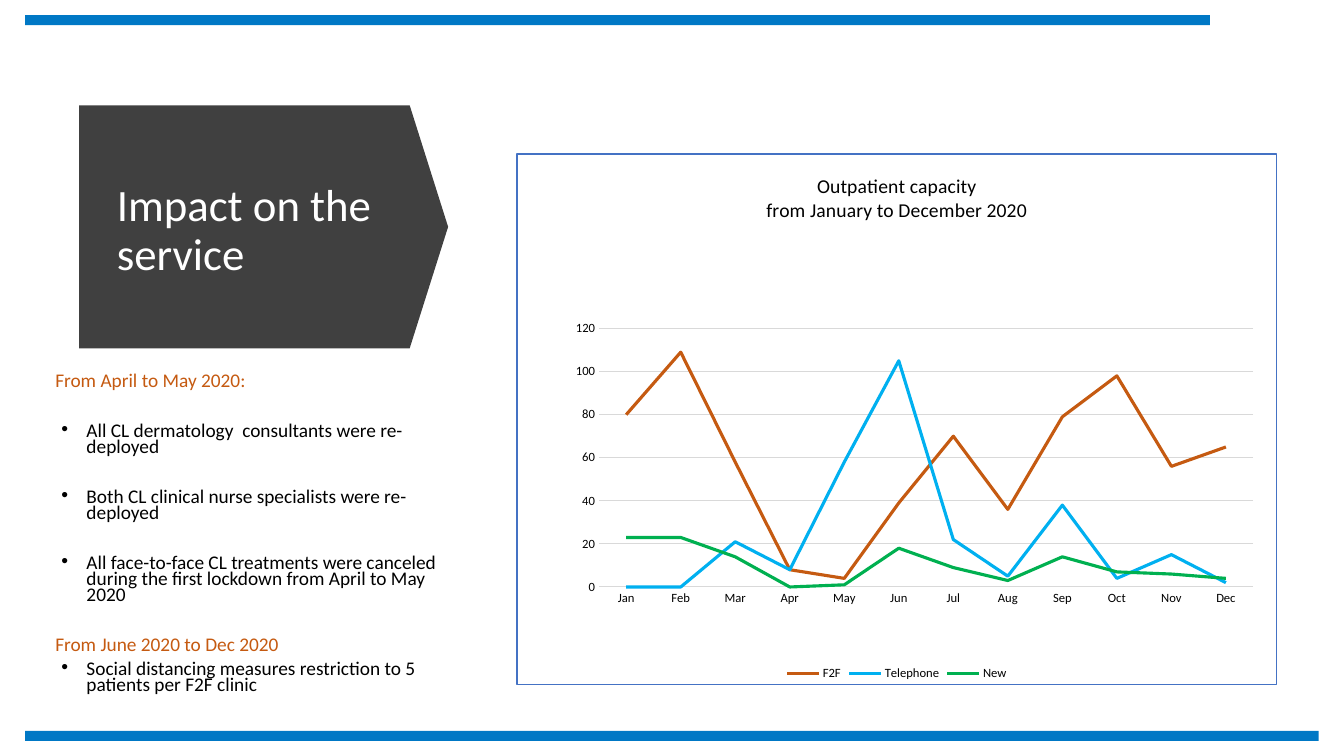
import pptx
import pptx.chart.data
import pptx.dml.color
import pptx.enum.chart
import pptx.enum.shapes
import pptx.enum.text
import pptx.oxml
import pptx.oxml.ns
import pptx.util
from pptx.util import Inches

RGBColor = pptx.dml.color.RGBColor
BAR_BLUE = RGBColor(0x00, 0x78, 0xC5)
ARROW_GREY = RGBColor(0x40, 0x40, 0x40)
WHITE = RGBColor(0xFF, 0xFF, 0xFF)
BLACK = RGBColor(0x00, 0x00, 0x00)
ORANGE = RGBColor(0xC5, 0x5A, 0x11)
SKY = RGBColor(0x00, 0xB0, 0xF0)
GREEN = RGBColor(0x00, 0xB0, 0x50)
GRID_GREY = RGBColor(0xD9, 0xD9, 0xD9)
FONT = "Calibri"
BLANK_LAYOUT = 6
SECTION_GAP = 17.8

# Text, is it a bullet, space before in points
IMPACT_LINES = [
    ("From April to May 2020:", False, 0),
    ("All CL dermatology  consultants were re-deployed", True, SECTION_GAP),
    ("Both CL clinical nurse specialists were re-deployed", True, SECTION_GAP),
    ("All face-to-face CL treatments were canceled during the first lockdown "
     "from April to May 2020", True, SECTION_GAP),
    ("From June 2020 to Dec 2020", False, SECTION_GAP),
    ("Social distancing measures restriction to 5 patients per F2F clinic", True, 0),
]

MONTHS = ["Jan", "Feb", "Mar", "Apr", "May", "Jun",
          "Jul", "Aug", "Sep", "Oct", "Nov", "Dec"]
APPOINTMENTS = [
    ("F2F", ORANGE, (80, 109, 58, 8, 4, 39, 70, 36, 79, 98, 56, 65)),
    ("Telephone", SKY, (0, 0, 21, 8, 58, 105, 22, 5, 38, 4, 15, 2)),
    ("New", GREEN, (23, 23, 14, 0, 1, 18, 9, 3, 14, 7, 6, 4)),
]
CHART_TITLE = ["Outpatient capacity", "from January to December 2020"]

CHART_FRAME = """<c:spPr {ns}><a:solidFill><a:srgbClr val="FFFFFF"/></a:solidFill>
<a:ln w="12700"><a:solidFill><a:srgbClr val="4472C4"/></a:solidFill></a:ln></c:spPr>"""
PLOT_LAYOUT = """<c:layout {ns}><c:manualLayout><c:layoutTarget val="inner"/>
<c:xMode val="edge"/><c:yMode val="edge"/><c:x val="0.108"/><c:y val="0.329"/>
<c:w val="0.861"/><c:h val="0.487"/></c:manualLayout></c:layout>"""


def chart_xml(template):
    return pptx.oxml.parse_xml(template.format(ns=pptx.oxml.ns.nsdecls("c", "a")))


def style_font(font, size, color):
    font.name = FONT
    font.size = pptx.util.Pt(size)
    font.bold = False
    font.color.rgb = color


def add_filled_shape(slide, kind, left, top, width, height, color):
    shape = slide.shapes.add_shape(
        kind, Inches(left), Inches(top), Inches(width), Inches(height))
    shape.shadow.inherit = False
    shape.fill.solid()
    shape.fill.fore_color.rgb = color
    shape.line.fill.background()
    return shape


def add_text_frame(slide, left, top, width, height):
    box = slide.shapes.add_textbox(
        Inches(left), Inches(top), Inches(width), Inches(height))
    box.text_frame.word_wrap = True
    return box.text_frame


def add_run(paragraph, text, size, color):
    run = paragraph.add_run()
    run.text = text
    style_font(run.font, size, color)


def make_bullet(paragraph):
    properties = paragraph._p.get_or_add_pPr()
    properties.set("marL", str(Inches(0.31)))
    properties.set("indent", str(Inches(-0.25)))
    namespace = pptx.oxml.ns.nsdecls("a")
    properties.append(pptx.oxml.parse_xml(f'<a:buFont {namespace} typeface="Arial"/>'))
    properties.append(pptx.oxml.parse_xml(f'<a:buChar {namespace} char="•"/>'))


def add_heading(slide):
    arrow = add_filled_shape(slide, pptx.enum.shapes.MSO_SHAPE.DOWN_ARROW,
                             1.41, 0.42, 2.41, 3.66, ARROW_GREY)
    arrow.rotation = 270
    arrow.adjustments[0] = 1
    arrow.adjustments[1] = 0.158
    heading = add_text_frame(slide, 1.06, 1.32, 2.92, 1.95)
    heading.vertical_anchor = pptx.enum.text.MSO_ANCHOR.MIDDLE
    heading.paragraphs[0].line_spacing = 0.9
    add_run(heading.paragraphs[0], "Impact on the service", 32, WHITE)


def add_impact_list(slide):
    impact = add_text_frame(slide, 0.45, 3.67, 4.27, 3.56)
    for index, (text, is_bullet, gap) in enumerate(IMPACT_LINES):
        paragraph = impact.add_paragraph() if index else impact.paragraphs[0]
        if is_bullet:
            make_bullet(paragraph)
        paragraph.line_spacing = 0.7
        paragraph.space_after = pptx.util.Pt(6)
        if gap:
            paragraph.space_before = pptx.util.Pt(gap)
        add_run(paragraph, text, 13.8, BLACK if is_bullet else ORANGE)


def style_line(line, color, width):
    line.color.rgb = color
    line.width = pptx.util.Pt(width)


def style_axes(chart):
    for axis in (chart.category_axis, chart.value_axis):
        axis.major_tick_mark = pptx.enum.chart.XL_TICK_MARK.NONE
        axis.minor_tick_mark = pptx.enum.chart.XL_TICK_MARK.NONE
        style_font(axis.tick_labels.font, 9, BLACK)
    style_line(chart.category_axis.format.line, GRID_GREY, 0.75)
    values = chart.value_axis
    values.minimum_scale, values.maximum_scale, values.major_unit = 0, 120, 20
    values.format.line.fill.background()
    style_line(values.major_gridlines.format.line, GRID_GREY, 0.75)


def add_capacity_chart(slide):
    capacity = pptx.chart.data.CategoryChartData()
    capacity.categories = MONTHS
    for name, _, counts in APPOINTMENTS:
        capacity.add_series(name, counts)
    chart = slide.shapes.add_chart(
        pptx.enum.chart.XL_CHART_TYPE.LINE, Inches(5.12), Inches(1.52),
        Inches(7.55), Inches(5.28), capacity).chart
    style_font(chart.font, 10, BLACK)

    # Title and legend
    title = chart.chart_title.text_frame
    for index, text in enumerate(CHART_TITLE):
        paragraph = title.add_paragraph() if index else title.paragraphs[0]
        add_run(paragraph, text, 14, BLACK)
    chart.has_legend = True
    chart.legend.position = pptx.enum.chart.XL_LEGEND_POSITION.BOTTOM
    chart.legend.include_in_layout = False
    style_font(chart.legend.font, 9, BLACK)

    # Lines, axes, frame and plot area
    for series, (_, color, _) in zip(chart.plots[0].series, APPOINTMENTS):
        series.smooth = False
        series.marker.style = pptx.enum.chart.XL_MARKER_STYLE.NONE
        style_line(series.format.line, color, 2.25)
    chart.plots[0].vary_by_categories = False
    style_axes(chart)
    chart_part = chart._chartSpace.chart
    chart_part.addnext(chart_xml(CHART_FRAME))
    plot_area = chart_part.plotArea
    for layout in plot_area.findall(pptx.oxml.ns.qn("c:layout")):
        plot_area.remove(layout)
    plot_area.insert(0, chart_xml(PLOT_LAYOUT))


def main():
    deck = pptx.Presentation()
    deck.slide_width, deck.slide_height = Inches(13.33), Inches(7.5)
    slide = deck.slides.add_slide(deck.slide_layouts[BLANK_LAYOUT])

    # Bars along the top and bottom edges
    for top, width in ((0.15, 11.75), (7.25, 12.83)):
        add_filled_shape(slide, pptx.enum.shapes.MSO_SHAPE.RECTANGLE,
                         0.25, top, width, 0.1, BAR_BLUE)

    add_heading(slide)
    add_impact_list(slide)
    add_capacity_chart(slide)
    deck.save("out.pptx")


if __name__ == "__main__":
    main()
